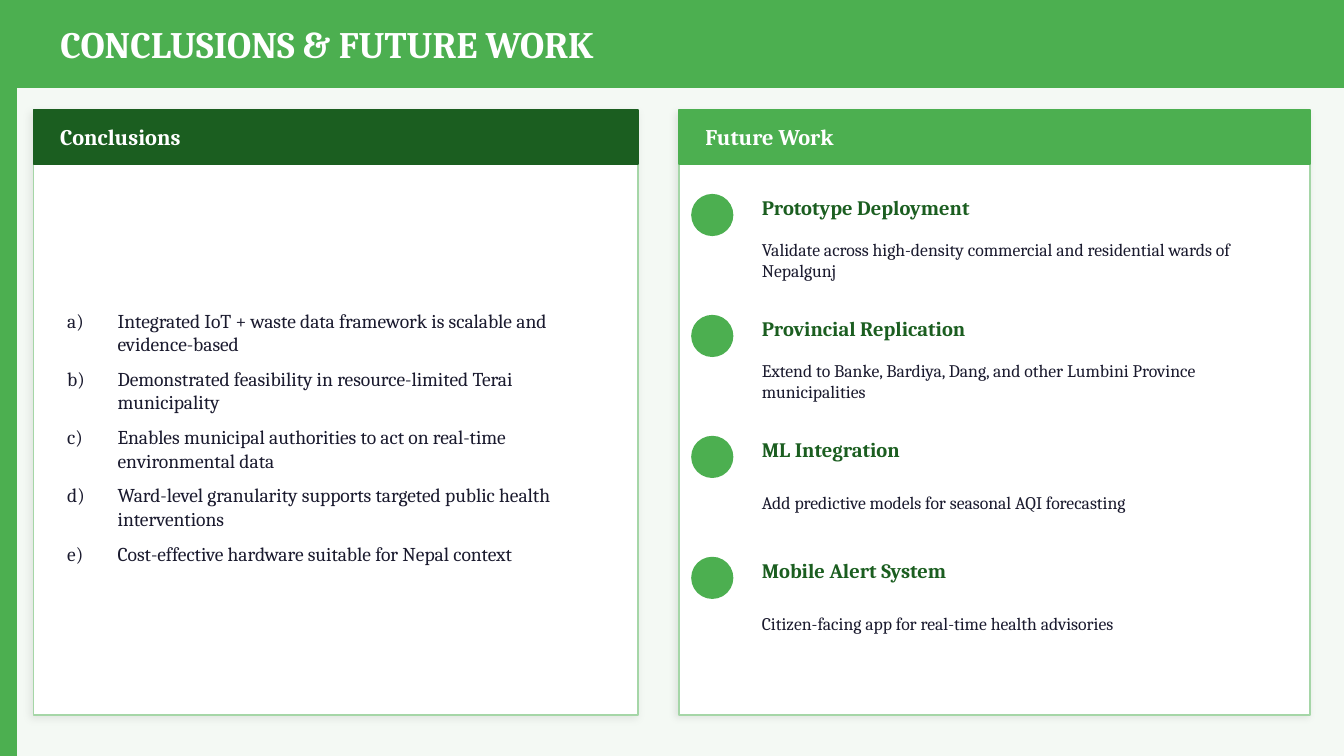
from lxml import etree
from pptx import Presentation, util as u
from pptx.dml import color
from pptx.enum import shapes, text
from pptx.oxml import ns

FONT = "Cambria"
SLIDE_WIDTH = 10
SLIDE_HEIGHT = SLIDE_WIDTH * 9 / 16
COLORS = {
    "background": "F4F9F4",
    "green": "4CAF50",
    "dark_green": "1B5E20",
    "border": "A5D6A7",
    "white": "FFFFFF",
    "ink": "1A1A2E",
    "shadow": "000000",
}
CONCLUSIONS = [
    "Integrated IoT + waste data framework is scalable and evidence-based",
    "Demonstrated feasibility in resource-limited Terai municipality",
    "Enables municipal authorities to act on real-time environmental data",
    "Ward-level granularity supports targeted public health interventions",
    "Cost-effective hardware suitable for Nepal context",
]
FUTURE_WORK = [
    ("Prototype Deployment",
     "Validate across high-density commercial and residential wards of Nepalgunj"),
    ("Provincial Replication",
     "Extend to Banke, Bardiya, Dang, and other Lumbini Province municipalities"),
    ("ML Integration", "Add predictive models for seasonal AQI forecasting"),
    ("Mobile Alert System", "Citizen-facing app for real-time health advisories"),
]


def rgb(name):
    return color.RGBColor.from_string(COLORS[name])


def place(shape, left, top, width, height):
    shape.left, shape.top = u.Inches(left), u.Inches(top)
    shape.width, shape.height = u.Inches(width), u.Inches(height)


def bring_to_front(slide, shape):
    slide.shapes._spTree.append(shape._element)


def add_block(slide, box, fill, line=None, kind=shapes.MSO_SHAPE.RECTANGLE):
    shape = slide.shapes.add_shape(kind, *map(u.Inches, box))
    shape.shadow.inherit = False
    shape.fill.solid()
    shape.fill.fore_color.rgb = rgb(fill)
    shape.line.color.rgb = rgb(line or fill)
    shape.line.width = u.Pt(1)
    return shape


def add_soft_shadow(shape):
    effects = shape._element.spPr.find(ns.qn("a:effectLst"))
    shadow = etree.SubElement(
        effects, ns.qn("a:outerShdw"), blurRad=str(u.Pt(4)), dist=str(u.Pt(2)),
        dir=str(135 * 60000), algn="bl", rotWithShape="0")
    tone = etree.SubElement(shadow, ns.qn("a:srgbClr"), val=COLORS["shadow"])
    etree.SubElement(tone, ns.qn("a:alpha"), val="8000")


def prepare_frame(shape):
    frame = shape.text_frame
    frame.word_wrap = True
    frame.auto_size = text.MSO_AUTO_SIZE.NONE
    frame.vertical_anchor = text.MSO_ANCHOR.MIDDLE
    return frame


def add_run(paragraph, words, size, tone, bold=False):
    paragraph.alignment = text.PP_ALIGN.LEFT
    run = paragraph.add_run()
    run.text = words
    run.font.name = FONT
    run.font.size = u.Pt(size)
    run.font.bold = bold
    run.font.color.rgb = rgb(tone)


def add_label(slide, box, words, size, tone, bold=False):
    label = slide.shapes.add_textbox(*map(u.Inches, box))
    add_run(prepare_frame(label).paragraphs[0], words, size, tone, bold)


def add_letter(paragraph):
    indent = u.Inches(3 / 8)
    properties = paragraph._p.get_or_add_pPr()
    properties.set("marL", str(indent))
    properties.set("indent", str(-indent))
    etree.SubElement(properties, ns.qn("a:buFont"), typeface="+mj-lt")
    etree.SubElement(properties, ns.qn("a:buAutoNum"), type="alphaLcParenR")


def build_header(slide, left, top, width, height):
    add_block(slide, (left, top, width, height), "green")
    title = slide.shapes.title
    place(title, left + 0.23, top + 0.1, 9.3, 0.45)
    add_run(prepare_frame(title).paragraphs[0],
            "CONCLUSIONS & FUTURE WORK", 20, "white", True)
    bring_to_front(slide, title)


def build_card(slide, box, heading, band):
    left, top, width, height = box
    add_soft_shadow(add_block(slide, box, "white", "border"))
    add_block(slide, (left, top, width, 0.4), band)
    add_label(slide, (left + 0.1, top, width - 0.2, 0.4), heading, 12, "white", True)


def build_conclusions(slide, box):
    left, top, width, height = box
    build_card(slide, box, "Conclusions", "dark_green")
    body = slide.placeholders[1]
    place(body, left + 0.15, top + 0.53, width - 0.3, height - 0.7)
    frame = prepare_frame(body)
    for index, words in enumerate(CONCLUSIONS):
        paragraph = frame.add_paragraph() if index else frame.paragraphs[0]
        add_letter(paragraph)
        paragraph.space_before = u.Pt(0)
        paragraph.space_after = u.Pt(6)
        add_run(paragraph, words, 10.5, "ink")
    bring_to_front(slide, body)


def build_future_work(slide, box):
    left, top, width, height = box
    build_card(slide, box, "Future Work", "green")
    for index, (heading, detail) in enumerate(FUTURE_WORK):
        row_top = top + 0.57 + index * 0.9
        add_block(slide, (left + 0.1, row_top + 0.06, 0.3, 0.3), "green",
                  kind=shapes.MSO_SHAPE.OVAL)
        add_label(slide, (left + 0.52, row_top, 4, 0.3), heading, 11, "dark_green", True)
        add_label(slide, (left + 0.52, row_top + 0.32, 4, 0.45), detail, 9.5, "ink")


def main():
    presentation = Presentation()
    presentation.slide_width = u.Inches(SLIDE_WIDTH)
    presentation.slide_height = u.Inches(SLIDE_HEIGHT)
    slide = presentation.slides.add_slide(presentation.slide_layouts[1])
    slide.background.fill.solid()
    slide.background.fill.fore_color.rgb = rgb("background")
    add_block(slide, (0, 0, 0.12, SLIDE_HEIGHT), "green")
    build_header(slide, 0.12, 0, 9.88, 0.65)
    build_conclusions(slide, (0.25, 0.82, 4.5, 4.5))
    build_future_work(slide, (5.05, 0.82, 4.7, 4.5))
    presentation.save("out.pptx")


if __name__ == "__main__":
    main()
